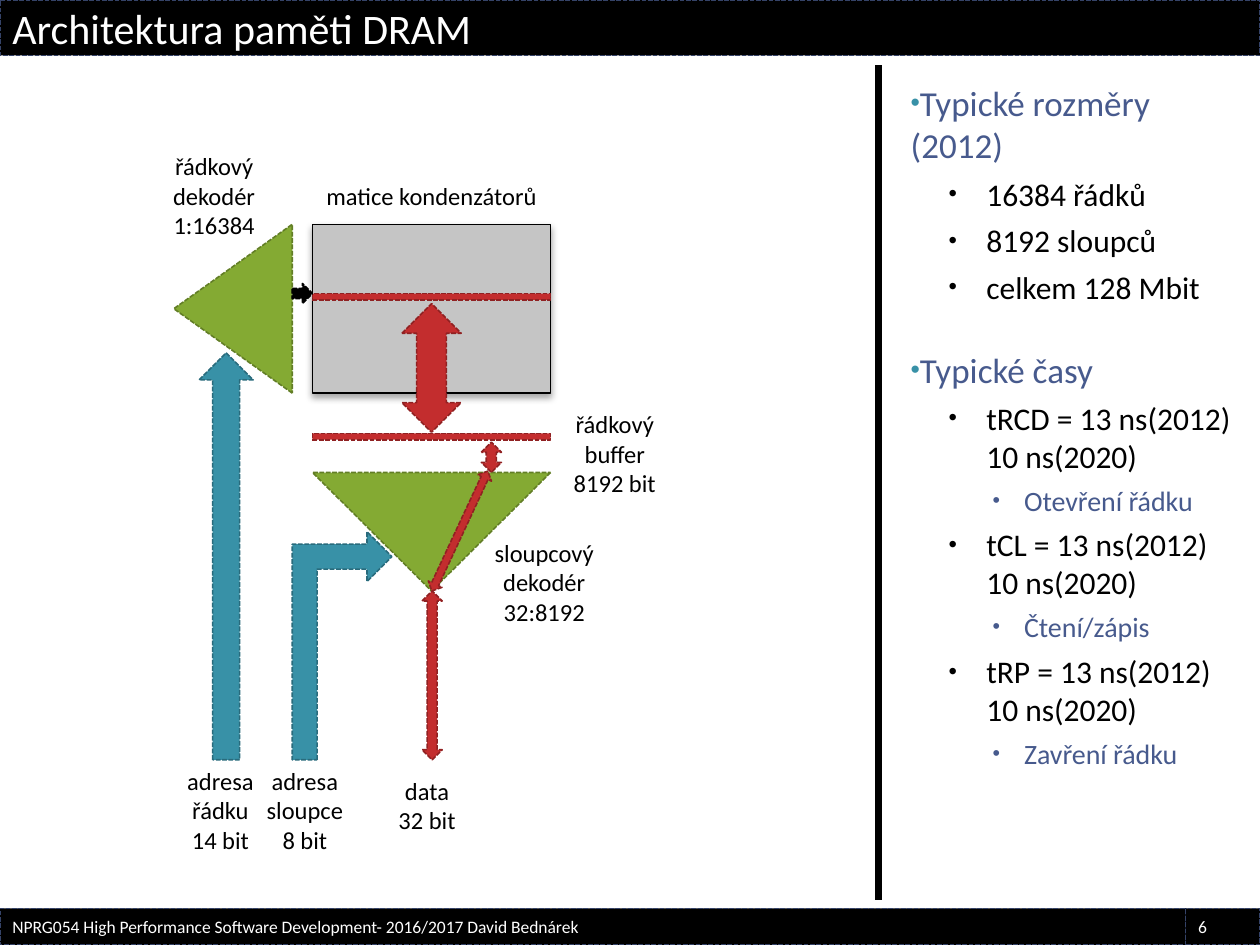
from lxml import etree
from pptx import Presentation
from pptx.dml.color import RGBColor
from pptx.enum import dml, shapes, text
from pptx.oxml import ns
from pptx.util import Inches, Pt

BLACK = RGBColor(0x00, 0x00, 0x00)
WHITE = RGBColor(0xFF, 0xFF, 0xFF)
GRAY = RGBColor(0xC5, 0xC5, 0xC5)
GREEN, DARK_GREEN = RGBColor(0x84, 0xAA, 0x33), RGBColor(0x62, 0x7E, 0x26)
RED, DARK_RED = RGBColor(0xC3, 0x2D, 0x2E), RGBColor(0x90, 0x21, 0x22)
TEAL, DARK_TEAL = RGBColor(0x38, 0x91, 0xA7), RGBColor(0x29, 0x6B, 0x7C)
BLUE, DARK_BLUE = RGBColor(0x47, 0x5A, 0x8D), RGBColor(0x35, 0x43, 0x68)

FONT = "Calibri"
KIND = shapes.MSO_SHAPE

# Level: size, colour, bullet colour, left margin, indent, space before
LEVELS = [
    (20, BLUE, TEAL, 0, 0, 0),
    (18, BLACK, BLACK, 0.6, -0.3, 5),
    (16, BLUE, BLUE, 0.9, -0.25, 5),
]
SECTION_GAP = 24.4

SECTIONS = [
    [(0, "Typické rozměry (2012)"),
     (1, "16384 řádků"),
     (1, "8192 sloupců"),
     (1, "celkem 128 Mbit")],
    [(0, "Typické časy"),
     (1, "tRCD = 13 ns(2012)\v10 ns(2020)"),
     (2, "Otevření řádku"),
     (1, "tCL = 13 ns(2012)\v10 ns(2020)"),
     (2, "Čtení/zápis"),
     (1, "tRP = 13 ns(2012)\v10 ns(2020)"),
     (2, "Zavření řádku")],
]

LABELS = [
    ("řádkový\vdekodér\n1:16384", 1.27, 1.15, 0.86, 0.81),
    ("matice kondenzátorů", 2.48, 1.39, 1.89, 0.34),
    ("řádkový\vbuffer\n8192 bit", 4.45, 3.2, 0.86, 0.81),
    ("sloupcový\vdekodér\n32:8192", 3.82, 4.22, 1, 0.81),
    ("adresa\vřádku\n14 bit", 1.38, 6.03, 0.74, 0.81),
    ("adresa\vsloupce\n8 bit", 2.01, 6.03, 0.82, 0.81),
    ("data\n32 bit", 3.06, 6.11, 0.66, 0.57),
]

MATRIX_LEFT, MATRIX_WIDTH = 2.48, 1.89


def add_child(parent, tag, **attributes):
    return etree.SubElement(parent, ns.qn(tag), attributes)


def set_font(para, size, color):
    para.font.name = FONT
    para.font.size = Pt(size)
    para.font.color.rgb = color


def add_block(page, kind, left, top, width, height, fill, line, rotation=0):
    """Add a filled preset shape with a thin dashed outline."""
    block = page.shapes.add_shape(
        kind, Inches(left), Inches(top), Inches(width), Inches(height))
    block.shadow.inherit = False
    block.fill.solid()
    block.fill.fore_color.rgb = fill
    block.line.color.rgb = line
    block.line.width = Pt(0.9)
    block.line.dash_style = dml.MSO_LINE.SQUARE_DOT
    block.rotation = rotation
    return block


def add_bar(page, wording, left, top, width, height, size):
    """Add a black title or footer bar."""
    bar = add_block(page, KIND.RECTANGLE, left, top, width, height, BLACK, DARK_BLUE)
    frame = bar.text_frame
    frame.vertical_anchor = text.MSO_ANCHOR.MIDDLE
    frame.text = wording
    para = frame.paragraphs[0]
    para.alignment = text.PP_ALIGN.LEFT
    set_font(para, size, WHITE)


def add_label(page, wording, left, top, width, height):
    box = page.shapes.add_textbox(
        Inches(left), Inches(top), Inches(width), Inches(height))
    box.text_frame.word_wrap = False
    box.text_frame.text = wording
    for para in box.text_frame.paragraphs:
        para.alignment = text.PP_ALIGN.CENTER
        set_font(para, 14, BLACK)


def add_divider(page):
    divider = page.shapes.add_connector(
        shapes.MSO_CONNECTOR.STRAIGHT,
        Inches(6.97), Inches(0.52), Inches(6.97), Inches(7.14))
    divider.line.color.rgb = BLACK
    divider.line.width = Pt(4)
    add_child(divider._element.spPr, "a:effectLst")


def format_bullet(para, level):
    size, color, bullet_color, margin, indent, space = LEVELS[level]
    para.level = level
    para.space_before = Pt(space)
    properties = para._p.get_or_add_pPr()
    properties.set("marL", str(Inches(margin)))
    properties.set("indent", str(Inches(indent)))
    add_child(add_child(properties, "a:buClr"), "a:srgbClr", val=str(bullet_color))
    add_child(properties, "a:buSzPct", val="76000")
    add_child(properties, "a:buFont", typeface="Arial")
    add_child(properties, "a:buChar", char="•")
    set_font(para, size, color)


def add_outline(page):
    """Add the bulleted column on the right."""
    box = page.shapes.add_textbox(
        Inches(7.13), Inches(0.6), Inches(2.76), Inches(6.46))
    frame = box.text_frame
    frame.word_wrap = True
    items = [item for section in SECTIONS for item in section]
    frame.text = "\n".join(wording for _, wording in items)
    for para, (level, _) in zip(frame.paragraphs, items):
        format_bullet(para, level)
    frame.paragraphs[len(SECTIONS[0])].space_before = Pt(SECTION_GAP)


def add_matrix(page):
    matrix = add_block(page, KIND.RECTANGLE, MATRIX_LEFT, 1.78, MATRIX_WIDTH, 1.34,
                       GRAY, BLACK)
    matrix.line.width = Pt(0.75)
    matrix.line.dash_style = dml.MSO_LINE.SOLID
    effects = matrix._element.spPr.find(ns.qn("a:effectLst"))
    shadow = add_child(effects, "a:outerShdw", blurRad=str(Pt(4)), dist=str(Pt(2)),
                       dir="5400000", rotWithShape="0")
    add_child(add_child(shadow, "a:srgbClr", val=str(BLACK)), "a:alpha", val="35000")


def add_decoders(page):
    add_block(page, KIND.ISOSCELES_TRIANGLE, 1.18, 1.98, 1.34, 0.94,
              GREEN, DARK_GREEN, 270)
    add_block(page, KIND.ISOSCELES_TRIANGLE, MATRIX_LEFT, 3.75, MATRIX_WIDTH, 0.94,
              GREEN, DARK_GREEN, 180)


def add_rows(page):
    """Add the open row in the matrix and the row buffer."""
    for top in (2.33, 3.44):
        add_block(page, KIND.RECTANGLE, MATRIX_LEFT, top, MATRIX_WIDTH, 0.05,
                  RED, DARK_RED)


def add_address_arrows(page):
    add_block(page, KIND.RIGHT_ARROW, 0.18, 4.2, 3.23, 0.43, TEAL, DARK_TEAL, 270)
    add_block(page, KIND.RIGHT_ARROW, 2.32, 2.25, 0.16, 0.16, BLACK, BLACK)
    column = add_block(page, KIND.BENT_UP_ARROW, 1.81, 4.73, 1.81, 0.79,
                       TEAL, DARK_TEAL, 90)
    column._element.spPr.find(ns.qn("a:xfrm")).set("flipH", "1")


def add_data_arrows(page):
    for left, top, width, height, rotation in [
        (3.35, 4.69, 0.16, 1.34, 0),
        (3.19, 2.41, 0.47, 1.02, 0),
        (3.82, 3.51, 0.16, 0.24, 0),
        (3.59, 3.69, 0.12, 1.05, 25),
    ]:
        add_block(page, KIND.UP_DOWN_ARROW, left, top, width, height,
                  RED, DARK_RED, rotation)


def main():
    deck = Presentation()
    deck.slide_width, deck.slide_height = Inches(10), Inches(7.5)
    page = deck.slides.add_slide(deck.slide_layouts[6])
    add_divider(page)
    add_outline(page)
    add_bar(page, "Architektura paměti DRAM", 0, 0, 10, 0.44, 24)
    add_bar(page, "6", 9.41, 7.21, 0.59, 0.29, 10)
    add_bar(page, "NPRG054 High Performance Software Development- 2016/2017 David Bednárek",
            0, 7.21, 9.41, 0.29, 10)
    add_matrix(page)
    add_decoders(page)
    add_rows(page)
    add_address_arrows(page)
    add_data_arrows(page)
    for label in LABELS:
        add_label(page, *label)
    deck.save("out.pptx")


if __name__ == "__main__":
    main()
